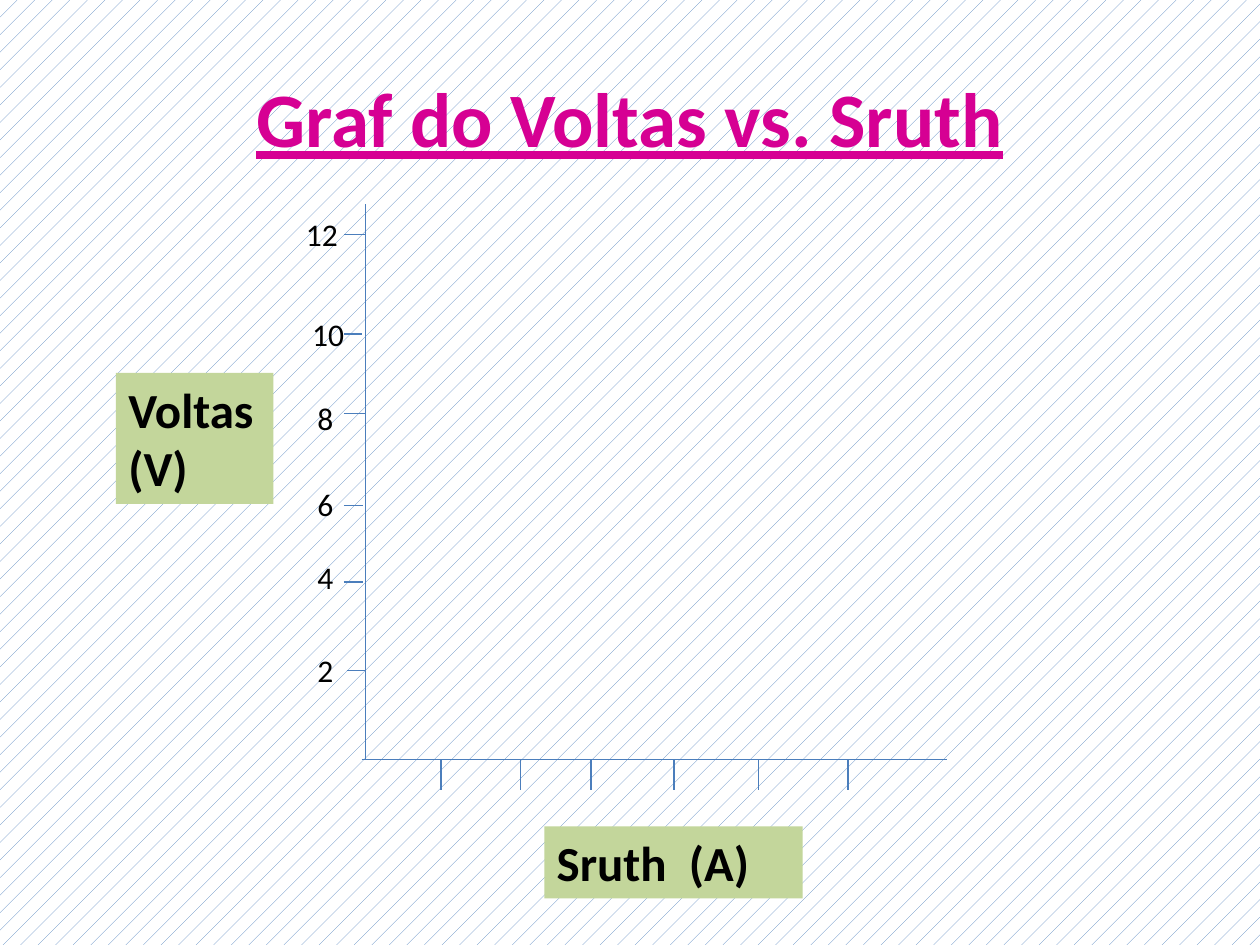
import pptx
import pptx.util
import pptx.dml.color
import pptx.enum.dml
import pptx.enum.shapes
import pptx.enum.text
import pptx.oxml.ns
from lxml import etree

Inches = pptx.util.Inches
COLORS = {
    "title": "D60093",
    "text": "000000",
    "axis": "4B7EBC",
    "label": "C3D69B",
    "hatch": "4F81BD",
    "paper": "FFFFFF",
}


def rgb(name):
    return pptx.dml.color.RGBColor.from_string(COLORS[name])


def write(tf, text, size=18, color="text", bold=False, underline=False,
          align="LEFT", anchor="TOP", wrap=True):
    tf.word_wrap = wrap
    tf.vertical_anchor = getattr(pptx.enum.text.MSO_ANCHOR, anchor)
    p = tf.paragraphs[0]
    p.alignment = getattr(pptx.enum.text.PP_ALIGN, align)
    r = p.add_run()
    r.text = text
    r.font.name = "Calibri"
    r.font.size = pptx.util.Pt(size)
    r.font.bold = bold
    r.font.underline = underline
    r.font.color.rgb = rgb(color)


class GraphSlide:
    def __init__(self, prs):
        self.s = prs.slides.add_slide(prs.slide_layouts[5])

    def background(self):
        fill = self.s.background.fill
        fill.patterned()
        fill.pattern = pptx.enum.dml.MSO_PATTERN.PERCENT_5
        fill.fore_color.rgb = rgb("hatch")
        fill.back_color.rgb = rgb("paper")

    def title(self, text, x, y, w, h):
        sp = self.s.shapes.title
        sp.left, sp.top, sp.width, sp.height = map(Inches, (x, y, w, h))
        write(sp.text_frame, text, size=44, color="title", bold=True,
              underline=True, align="CENTER", anchor="MIDDLE")

    def line(self, x1, y1, x2, y2):
        c = self.s.shapes.add_connector(
            pptx.enum.shapes.MSO_CONNECTOR.STRAIGHT,
            *map(Inches, (x1, y1, x2, y2)))
        c.line.color.rgb = rgb("axis")
        c.line.width = pptx.util.Pt(0.75)
        etree.SubElement(c._element.spPr, pptx.oxml.ns.qn("a:effectLst"))

    def axis_name(self, text, x, y, w, h):
        sp = self.s.shapes.add_shape(
            pptx.enum.shapes.MSO_SHAPE.RECTANGLE, *map(Inches, (x, y, w, h)))
        sp.shadow.inherit = False
        sp.fill.solid()
        sp.fill.fore_color.rgb = rgb("label")
        sp.line.fill.background()
        write(sp.text_frame, text, size=28, bold=True)

    def number(self, text, x, y, w, wrap=True):
        sp = self.s.shapes.add_textbox(*map(Inches, (x, y, w, 0.4)))
        write(sp.text_frame, text, wrap=wrap)


def main():
    prs = pptx.Presentation()
    prs.slide_width, prs.slide_height = Inches(10), Inches(7.5)
    graph = GraphSlide(prs)
    graph.background()
    graph.title("Graf do Voltas vs. Sruth", 0.5, 0.3, 9, 1.25)

    axis_x, axis_y = 2.9, 6.03
    graph.line(axis_x, 1.62, axis_x, axis_y)
    graph.line(2.87, axis_y, 7.52, axis_y)
    graph.axis_name("Voltas (V)", 0.92, 2.96, 1.25, 1.04)
    graph.axis_name("Sruth  (A)", 4.32, 6.56, 2.05, 0.57)

    # Volts, tick start, tick end, tick height, label left, top and width
    volt_ticks = [
        (2, 2.75, 2.9, 5.32, 2.42, 5.12, 0.31),
        (4, 2.73, 2.88, 4.62, 2.42, 4.38, 0.31),
        (6, 2.73, 2.88, 4.01, 2.42, 3.8, 0.31),
        (8, 2.73, 2.9, 3.28, 2.42, 3.12, 0.33),
        (10, 2.73, 2.87, 2.65, 2.38, 2.45, 0.46),
        (12, 2.73, 2.9, 1.86, 2.33, 1.66, 0.51),
    ]
    for volts, x1, x2, y, left, top, width in volt_ticks:
        graph.line(x1, y, x2, y)
        graph.number(str(volts), left, top, width, wrap=volts != 10)

    for x in (3.5, 4.13, 4.69, 5.35, 6.02, 6.73):
        graph.line(x, axis_y, x, axis_y + 0.24)

    prs.save("out.pptx")


if __name__ == "__main__":
    main()
